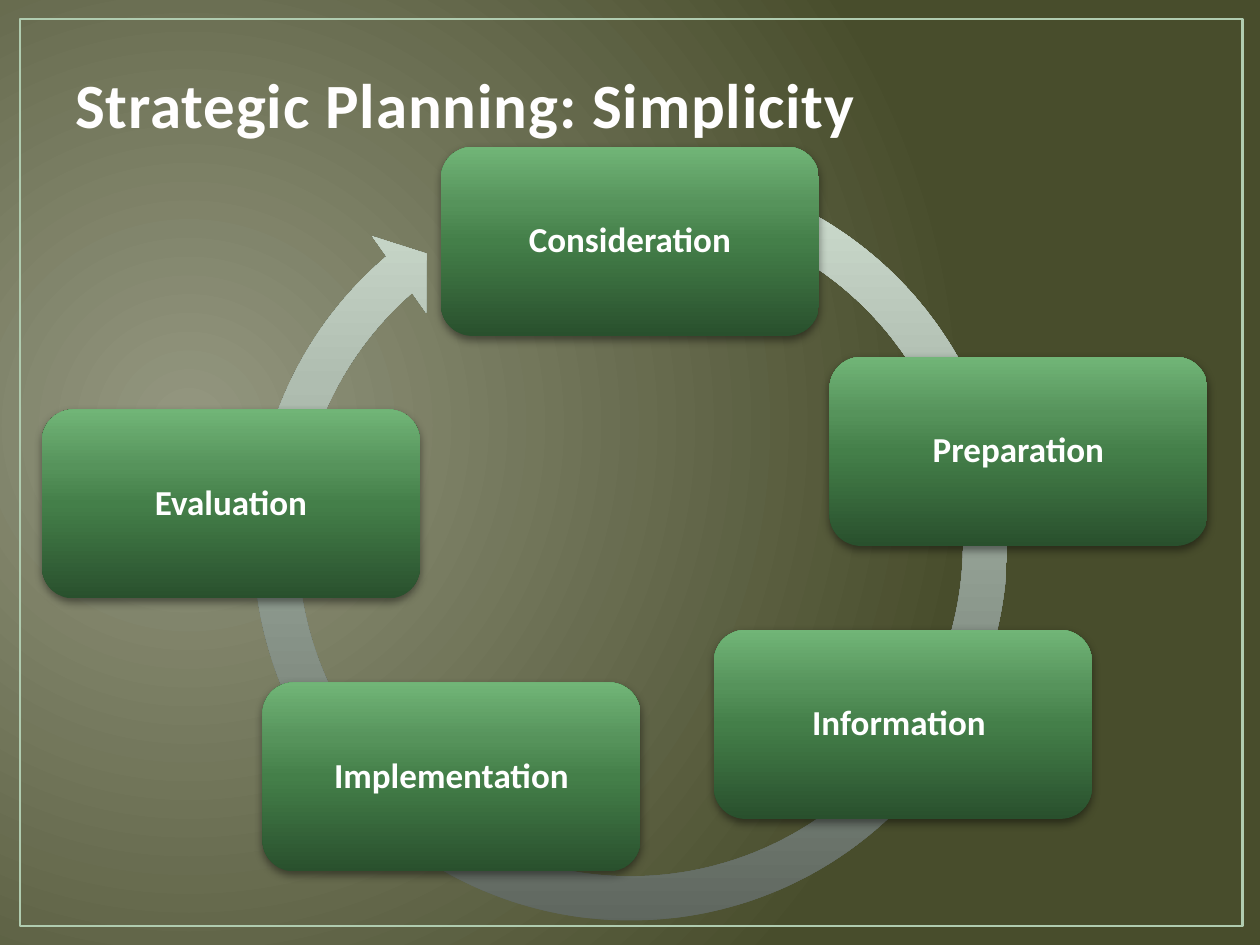
from dataclasses import dataclass

from lxml.etree import SubElement
from pptx import Presentation
from pptx.dml.color import RGBColor
from pptx.enum.shapes import MSO_SHAPE as Shape
from pptx.enum.text import MSO_ANCHOR as Anchor, PP_ALIGN as Align
from pptx.oxml.ns import qn
from pptx.util import Pt


@dataclass(frozen=True)
class Theme:
    font: str = "Calibri"
    title_size: int = 36
    step_size: int = 20
    title_color: str = "FFFEFE"
    step_color: str = "FFFFFF"
    frame_color: str = "B0CCB0"
    shadow_color: str = "000000"
    background: tuple = ((0, "949780"), (100, "484D2C"))
    ring: tuple = ((0, "5C645C"), (50, "94A195"), (70, "AFBDB0"), (100, "D5E4D6"))
    step: tuple = ((0, "29502D"), (50, "447F49"), (70, "56935B"), (100, "71B577"))


THEME = Theme()
STEP_SIZE = (216, 108)
# Left and top of each step, clockwise from the top of the ring
STEPS = [
    ("Consideration", 252, 84),
    ("Preparation", 474, 204),
    ("Information ", 408, 360),
    ("Implementation", 150, 390),
    ("Evaluation", 24, 234),
]


def add_element(parent, tag, **attributes):
    element = SubElement(parent, qn(tag))
    for name, value in attributes.items():
        element.set(name, str(value))
    return element


def set_gradient(fill, owner, stops):
    """Fill bottom to top with the given stops; return the gradient element."""
    fill.gradient()
    fill.gradient_angle = 90
    gradient = owner.find(".//" + qn("a:gradFill"))
    stop_list = gradient.find(qn("a:gsLst"))
    for stop in list(stop_list):
        stop_list.remove(stop)
    for position, color in stops:
        stop = add_element(stop_list, "a:gs", pos=position * 1000)
        add_element(stop, "a:srgbClr", val=color)
    return gradient


def add_shadow(shape):
    effects = shape.element.spPr.find(qn("a:effectLst"))
    shadow = add_element(effects, "a:outerShdw", blurRad=Pt(5), dist=Pt(2),
                         dir=90 * 60000, rotWithShape=0)
    color = add_element(shadow, "a:srgbClr", val=THEME.shadow_color)
    add_element(color, "a:alpha", val=43000)


def add_plain_shape(slide, kind, box):
    shape = slide.shapes.add_shape(kind, *map(Pt, box))
    shape.shadow.inherit = False
    return shape


def set_text(text_frame, text, size, color):
    text_frame.word_wrap = True
    paragraph = text_frame.paragraphs[0]
    paragraph.text = text
    font = paragraph.runs[0].font
    font.name, font.size, font.bold = THEME.font, Pt(size), True
    font.color.rgb = RGBColor.from_string(color)
    return paragraph


def draw_backdrop(slide, box):
    # Radial background centred on the left
    gradient = set_gradient(slide.background.fill, slide.element, THEME.background)
    gradient.remove(gradient.find(qn("a:lin")))
    radial = add_element(gradient, "a:path", path="circle")
    add_element(radial, "a:fillToRect", l=15000, t=50000, r=85000, b=60000)

    # Thin frame
    frame = add_plain_shape(slide, Shape.RECTANGLE, box)
    frame.fill.background()
    frame.line.color.rgb = RGBColor.from_string(THEME.frame_color)
    frame.line.width = Pt(1.5)


def draw_title(slide, box, text):
    text_frame = slide.shapes.add_textbox(*map(Pt, box)).text_frame
    text_frame.vertical_anchor = Anchor.BOTTOM
    paragraph = set_text(text_frame, text, THEME.title_size, THEME.title_color)
    paragraph.runs[0].font._element.set("spc", "50")


def draw_ring(slide, box):
    ring = add_plain_shape(slide, Shape.CIRCULAR_ARROW, box)
    for index, value in enumerate((0.055, 3.307, 137.61, 173.951, 0.058)):
        ring.adjustments[index] = value
    set_gradient(ring.fill, ring.element, THEME.ring)
    ring.line.fill.background()


def draw_step(slide, box, text):
    step = add_plain_shape(slide, Shape.ROUNDED_RECTANGLE, box)
    set_gradient(step.fill, step.element, THEME.step)
    step.line.fill.background()
    add_shadow(step)
    step.text_frame.vertical_anchor = Anchor.MIDDLE
    paragraph = set_text(step.text_frame, text, THEME.step_size, THEME.step_color)
    paragraph.alignment = Align.CENTER
    paragraph.line_spacing = 0.9


def main():
    presentation = Presentation()
    presentation.slide_width, presentation.slide_height = Pt(720), Pt(540)
    slide = presentation.slides.add_slide(presentation.slide_layouts[6])

    draw_backdrop(slide, (11.5, 10.8, 698.4, 518.4))
    draw_title(slide, (36, 21.6, 648, 62.6), "Strategic Planning: Simplicity")

    # Cycle: ring behind, steps on top
    draw_ring(slide, (131, 81.4, 458.6, 458.6))
    for text, left, top in STEPS:
        draw_step(slide, (left, top, *STEP_SIZE), text)

    presentation.save("out.pptx")


if __name__ == "__main__":
    main()
